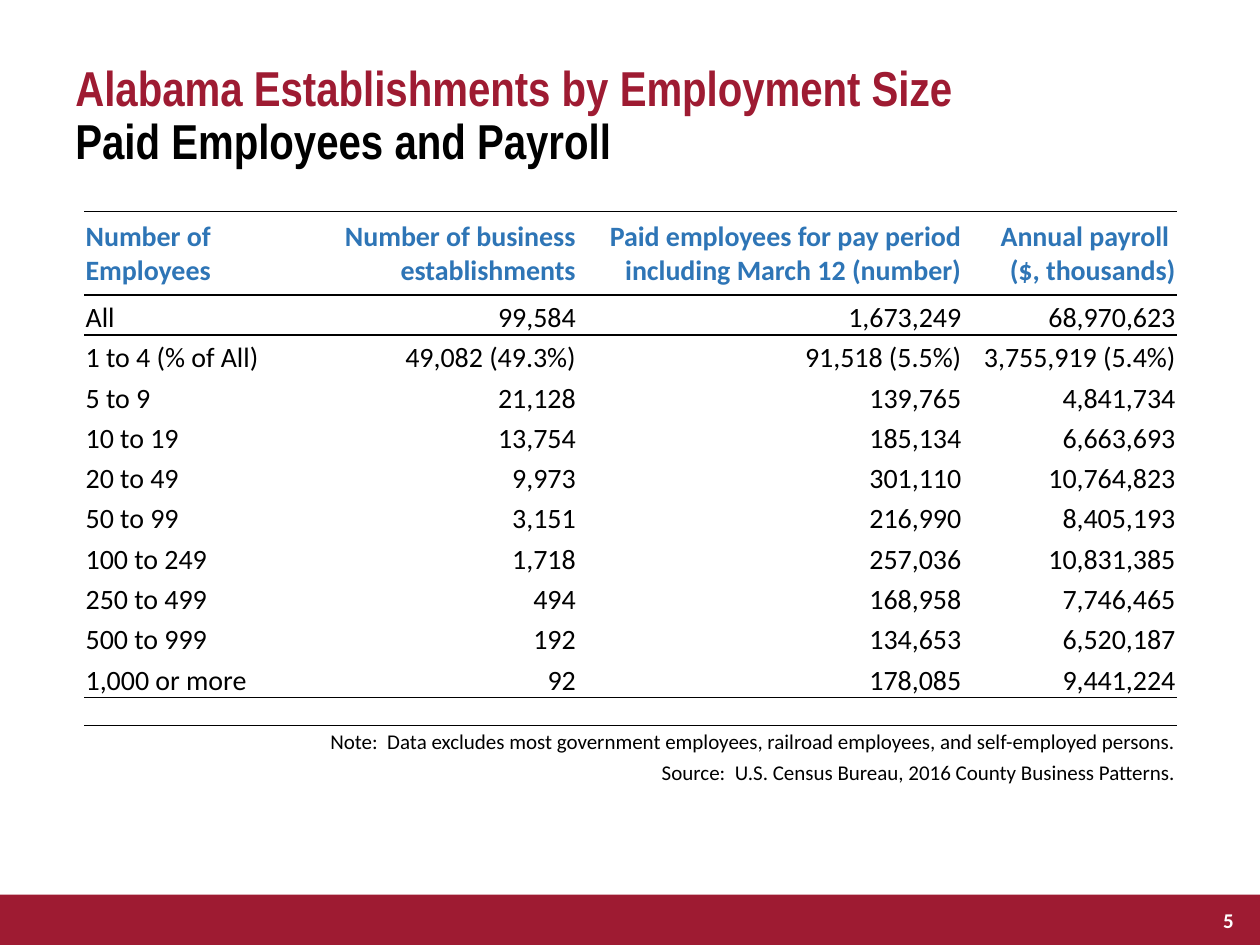
from dataclasses import dataclass

from lxml.etree import SubElement, fromstring
from pptx import Presentation
from pptx.dml.color import RGBColor
from pptx.enum.shapes import MSO_SHAPE
from pptx.enum.text import MSO_ANCHOR, PP_ALIGN
from pptx.oxml.ns import qn
from pptx.util import Inches, Pt


@dataclass(frozen=True)
class Theme:
    red: str = "9E1B32"
    blue: str = "2E75B6"
    black: str = "000000"
    white: str = "FFFFFF"
    head: str = "Arial Narrow"
    body: str = "Calibri"
    big: int = 28
    mid: int = 16
    small: int = 12


THEME = Theme()
PLAIN = "{2D5ABB26-0587-4C30-8999-92F81FD0307C}"
WIDTHS = (1.86, 2.05, 3.06, 1.7)
HEADS = (
    "Number of Employees",
    "Number of business establishments",
    "Paid employees for pay period including March 12 (number)",
    "Annual payroll \n($, thousands)",
)
ROWS = (
    ("All", "99,584", "1,673,249", "68,970,623"),
    ("1 to 4 (% of All)", "49,082 (49.3%)", "91,518 (5.5%)", "3,755,919 (5.4%)"),
    ("5 to 9", "21,128", "139,765", "4,841,734"),
    ("10 to 19", "13,754", "185,134", "6,663,693"),
    ("20 to 49", "9,973", "301,110", "10,764,823"),
    ("50 to 99", "3,151", "216,990", "8,405,193"),
    ("100 to 249", "1,718", "257,036", "10,831,385"),
    ("250 to 499", "494", "168,958", "7,746,465"),
    ("500 to 999", "192", "134,653", "6,520,187"),
    ("1,000 or more", "92", "178,085", "9,441,224"),
)
NOTES = (
    "Note:  Data excludes most government employees, railroad employees, and self-employed persons.",
    "Source:  U.S. Census Bureau, 2016 County Business Patterns.",
)


def add_run(para, text, size, color, face=THEME.body, bold=False):
    run = para.add_run()
    run.text = text
    font = run.font
    font.name, font.size, font.bold = face, Pt(size), bold
    font.color.rgb = RGBColor.from_string(color)


def add_title(slide, box):
    frame = slide.shapes.add_textbox(*map(Inches, box)).text_frame
    frame.word_wrap = True
    para = frame.paragraphs[0]
    para.line_spacing = 0.9
    add_run(para, "Alabama Establishments by Employment Size", THEME.big, THEME.red, THEME.head, True)
    para.add_line_break()
    add_run(para, "Paid Employees and Payroll", THEME.big, THEME.black, THEME.head, True)


def add_rule(cell, side):
    line = fromstring(
        '<a:%s xmlns:a="http://schemas.openxmlformats.org/drawingml/2006/main" w="12700">'
        '<a:solidFill><a:srgbClr val="%s"/></a:solidFill></a:%s>' % (side, THEME.black, side)
    )
    cell._tc.get_or_add_tcPr().insert(0, line)


def set_cell(cell, text, size, color, bold, align, anchor):
    cell.margin_left = cell.margin_right = cell.margin_top = Inches(0.01)
    cell.margin_bottom = 0
    cell.vertical_anchor = anchor
    frame = cell.text_frame
    for i, part in enumerate(text.split("\n")):
        para = frame.add_paragraph() if i else frame.paragraphs[0]
        para.alignment = align
        if part:
            add_run(para, part, size, color, THEME.body, bold)
        else:
            SubElement(para._p, qn("a:endParaRPr"), sz=str(size * 100))


def add_data(slide, box):
    grid = (HEADS, *ROWS, ("",), *((note,) for note in NOTES))
    last = len(ROWS)
    highs = (0.66, *[0.32] * last, 0.22, *[0.24] * len(NOTES))
    frame = slide.shapes.add_table(len(grid), len(WIDTHS), *map(Inches, box))
    table = frame.table
    table.first_row = table.horz_banding = False
    table._tbl.tblPr.find(qn("a:tableStyleId")).text = PLAIN
    for col, width in zip(table.columns, WIDTHS):
        col.width = Inches(width)
    for r, (texts, high) in enumerate(zip(grid, highs)):
        table.rows[r].height = Inches(high)
        top, foot = r == 0, r > last
        for c in range(len(WIDTHS)):
            cell = table.cell(r, c)
            cell.fill.background()
            if r in (0, last):
                add_rule(cell, "lnB")
            if r in (0, 1, last + 1):
                add_rule(cell, "lnT")
        if foot:
            table.cell(r, 0).merge(table.cell(r, len(WIDTHS) - 1))
        for c, text in enumerate(texts):
            set_cell(
                table.cell(r, c), text,
                THEME.small if foot else THEME.mid,
                THEME.blue if top else THEME.black,
                top,
                PP_ALIGN.RIGHT if c or foot else PP_ALIGN.LEFT,
                MSO_ANCHOR.MIDDLE if top else MSO_ANCHOR.BOTTOM,
            )


def add_foot(slide, box):
    left, top, width, high = box
    bar = slide.shapes.add_shape(MSO_SHAPE.RECTANGLE, *map(Inches, box))
    bar.shadow.inherit = False
    bar.fill.solid()
    bar.fill.fore_color.rgb = RGBColor.from_string(THEME.red)
    bar.line.fill.background()
    place = (left + width - 0.53, top, 0.42, high)
    frame = slide.shapes.add_textbox(*map(Inches, place)).text_frame
    frame.word_wrap = True
    frame.vertical_anchor = MSO_ANCHOR.MIDDLE
    para = frame.paragraphs[0]
    para.alignment = PP_ALIGN.RIGHT
    add_run(para, "5", THEME.small, THEME.white, THEME.body, True)


def main():
    deck = Presentation()
    deck.slide_width, deck.slide_height = Inches(10), Inches(7.5)
    slide = deck.slides.add_slide(deck.slide_layouts[6])
    add_foot(slide, (0, 7.1, 10, 0.4))
    add_title(slide, (0.5, 0.46, 9, 0.73))
    add_data(slide, (0.67, 1.68, 8.67, 4.56))
    deck.save("out.pptx")


if __name__ == "__main__":
    main()
